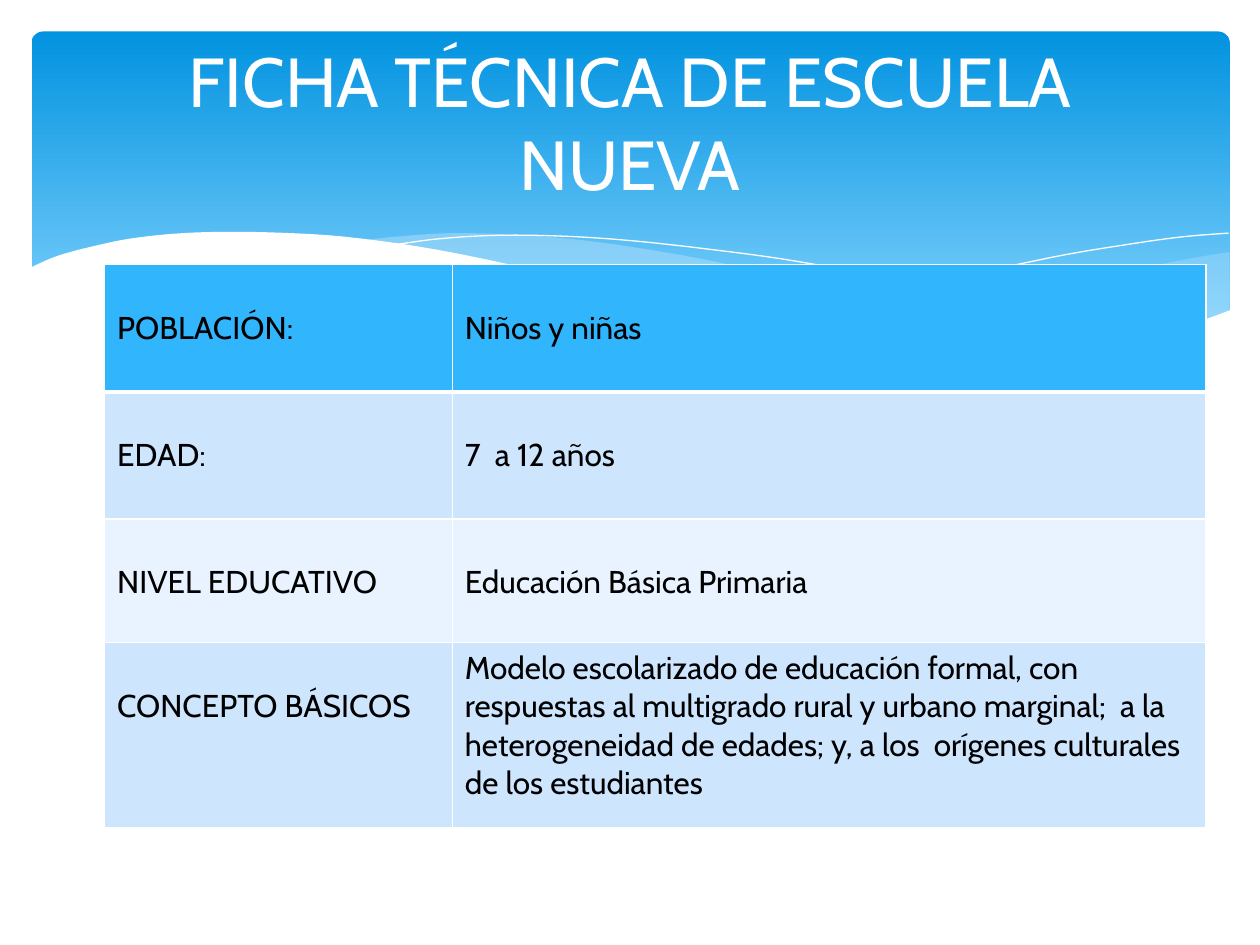
"""Builds the Escuela Nueva fact-sheet slide: a wave banner, a title and a table."""
from lxml import etree
from pptx import Presentation
from pptx.dml.color import RGBColor
from pptx.enum.shapes import MSO_SHAPE
from pptx.enum.text import MSO_ANCHOR, PP_ALIGN
from pptx.oxml.ns import qn
from pptx.util import Inches, Pt

ROUNDED = MSO_SHAPE.ROUNDED_RECTANGLE
MIDDLE, TOP = MSO_ANCHOR.MIDDLE, MSO_ANCHOR.TOP
CENTER, LEFT = PP_ALIGN.CENTER, PP_ALIGN.LEFT
WHITE = RGBColor(0xFF, 0xFF, 0xFF)
BLACK = RGBColor(0x00, 0x00, 0x00)
BANNER_TOP = RGBColor(0x02, 0x93, 0xE0)
BANNER_BOTTOM = RGBColor(0x83, 0xD3, 0xFE)
MIST = RGBColor(0xC6, 0xE7, 0xFC)
HEADER_BLUE = RGBColor(0x31, 0xB6, 0xFD)
BAND_DARK = RGBColor(0xCE, 0xE5, 0xFE)
BAND_LIGHT = RGBColor(0xE8, 0xF3, 0xFF)
FONT = "Cabin"
STEPS = 6


def smooth(knots):
    """Return points on a Catmull-Rom curve through the knots."""
    padded = [knots[0], *knots, knots[-1]]
    points = [knots[0]]
    for a, b, c, d in zip(padded, padded[1:], padded[2:], padded[3:]):
        for step in range(1, STEPS + 1):
            t = step / STEPS
            points.append(tuple(
                (2 * q + (r - p) * t + (2 * p - 5 * q + 4 * r - s) * t ** 2
                 + (3 * q - p - 3 * r + s) * t ** 3) / 2
                for p, q, r, s in zip(a, b, c, d)))
    return points


def add_cell_border(cell, side, points):
    """Give one side of a table cell a solid white line."""
    properties = cell._tc.get_or_add_tcPr()
    line = etree.Element(qn("a:" + side), w=str(Pt(points)))
    solid = etree.SubElement(line, qn("a:solidFill"))
    etree.SubElement(solid, qn("a:srgbClr"), val=str(WHITE))
    properties.append(line)


prs = Presentation()
prs.slide_width, prs.slide_height = Inches(10), Inches(7.5)
slide = prs.slides.add_slide(prs.slide_layouts[5])
shapes = slide.shapes

banner = shapes.add_shape(ROUNDED, Inches(0.25), Inches(0.25), Inches(9.51), Inches(2.7))
banner.adjustments[0] = 0.034
banner.shadow.inherit = False
banner.line.fill.background()
banner.fill.gradient()
banner.fill.gradient_angle = 270
for stop, color, position in zip(banner.fill.gradient_stops, (BANNER_TOP, BANNER_BOTTOM), (0, 0.9)):
    stop.color.rgb = color
    stop.position = position

right_swell = [
    [(9.76, 2), (9.35, 2.07), (8.61, 2.23), (7.79, 2.42), (7.06, 2.57), (6.61, 2.65)],
    [(6.61, 2.65), (7.19, 2.72), (7.69, 2.77), (8.14, 2.78), (8.63, 2.75),
     (9.05, 2.69), (9.42, 2.59), (9.76, 2.47)],
]
middle_swell = [
    [(8.93, 2.73), (8.37, 2.65), (7.75, 2.54), (7.06, 2.4), (6.29, 2.22), (5.69, 2.08),
     (5.14, 1.98), (4.65, 1.91), (4.2, 1.87), (3.61, 1.85), (3.13, 1.88), (2.86, 1.91)],
    [(2.86, 1.91), (3.42, 1.99), (4.04, 2.11), (4.49, 2.22), (5.3, 2.4), (6.01, 2.55),
     (6.65, 2.66), (7.22, 2.74), (7.73, 2.77), (8.18, 2.78), (8.57, 2.77), (8.93, 2.73)],
]
long_crest = [[(3.09, 1.95), (3.44, 1.9), (3.87, 1.87), (4.33, 1.87), (4.89, 1.9), (5.56, 1.97),
               (6.36, 2.08), (7.27, 2.26), (8.31, 2.51), (9.07, 2.72)]]
right_crest = [[(6.13, 2.57), (6.72, 2.41), (7.48, 2.23), (8.36, 2.04), (8.95, 1.94),
                (9.38, 1.88), (9.75, 1.85)]]
front_wave = [
    [(9.77, 2.46), (9.4, 2.59), (8.99, 2.69), (8.5, 2.75), (8.09, 2.77), (7.61, 2.75),
     (7.08, 2.7), (6.48, 2.62), (5.79, 2.5), (5.03, 2.33), (4.47, 2.2), (3.91, 2.07),
     (3.4, 1.97), (2.92, 1.9), (2.5, 1.86), (1.93, 1.84), (1.46, 1.85), (1.06, 1.89),
     (0.76, 1.95), (0.46, 2.03), (0.23, 2.13)],
    [(0.23, 3.29)],
    [(9.77, 3.29)],
]

for curves, fill_color, opacity in (
    (right_swell, MIST, 29),
    (middle_swell, MIST, 40),
    (long_crest, None, 100),
    (right_crest, None, 100),
    (front_wave, WHITE, 100),
):
    outline = [(Inches(x), Inches(y)) for curve in curves for x, y in smooth(curve)]
    builder = shapes.build_freeform(*outline[0])
    builder.add_line_segments(outline[1:], close=fill_color is not None)
    wave = builder.convert_to_shape()
    wave.shadow.inherit = False
    if fill_color is None:
        wave.fill.background()
        wave.line.color.rgb = WHITE
        wave.line.width = Pt(0)
    else:
        wave.fill.solid()
        wave.fill.fore_color.rgb = fill_color
        wave.line.fill.background()
        if opacity < 100:
            tint = wave.element.spPr.find(qn("a:solidFill"))[0]
            etree.SubElement(tint, qn("a:alpha"), val=str(opacity * 1000))

title = shapes.title
title.element.getparent().append(title.element)
title.left, title.top, title.width, title.height = Inches(0.5), Inches(0.37), Inches(9), Inches(1.18)
title.text_frame.text = "FICHA TÉCNICA DE ESCUELA NUEVA"
title.text_frame.vertical_anchor = MIDDLE
heading = title.text_frame.paragraphs[0]
heading.alignment = CENTER
heading.runs[0].font.size = Pt(39.6)
heading.runs[0].font.name = FONT
heading.runs[0].font.color.rgb = WHITE

facts = [
    ("POBLACIÓN:", "Niños y niñas"),
    ("EDAD:", "7  a 12 años"),
    ("NIVEL EDUCATIVO", "Educación Básica Primaria"),
    ("CONCEPTO BÁSICOS",
     "Modelo escolarizado de educación formal, con respuestas al multigrado rural y urbano "
     "marginal;  a la heterogeneidad de edades; y, a los  orígenes culturales de los estudiantes"),
]
row_heights = (1.01, 1.01, 0.98, 1.47)
row_fills = (HEADER_BLUE, BAND_DARK, BAND_LIGHT, BAND_DARK)
column_widths = (2.76, 5.98)

fact_sheet = shapes.add_table(len(facts), 2, Inches(0.83), Inches(2.1),
                              Inches(sum(column_widths)), Inches(sum(row_heights))).table
fact_sheet.first_row = False
fact_sheet.horz_banding = False
for column, width in zip(fact_sheet.columns, column_widths):
    column.width = Inches(width)

for row_index, (fact, height, row_fill) in enumerate(zip(facts, row_heights, row_fills)):
    fact_sheet.rows[row_index].height = Inches(height)
    for column_index, wording in enumerate(fact):
        cell = fact_sheet.cell(row_index, column_index)
        is_concept = (row_index, column_index) == (3, 1)
        cell.margin_top = Inches(0.05 if is_concept else 0.35)
        cell.vertical_anchor = TOP
        for side in ("lnL", "lnR", "lnT", "lnB"):
            under_header = (row_index, side) in ((0, "lnB"), (1, "lnT"))
            add_cell_border(cell, side, 3 if under_header else 1)
        cell.fill.solid()
        cell.fill.fore_color.rgb = row_fill
        cell.text_frame.text = wording
        entry = cell.text_frame.paragraphs[0]
        entry.alignment = LEFT
        entry.runs[0].font.size = Pt(18)
        entry.runs[0].font.name = FONT
        entry.runs[0].font.color.rgb = BLACK

prs.save("out.pptx")
